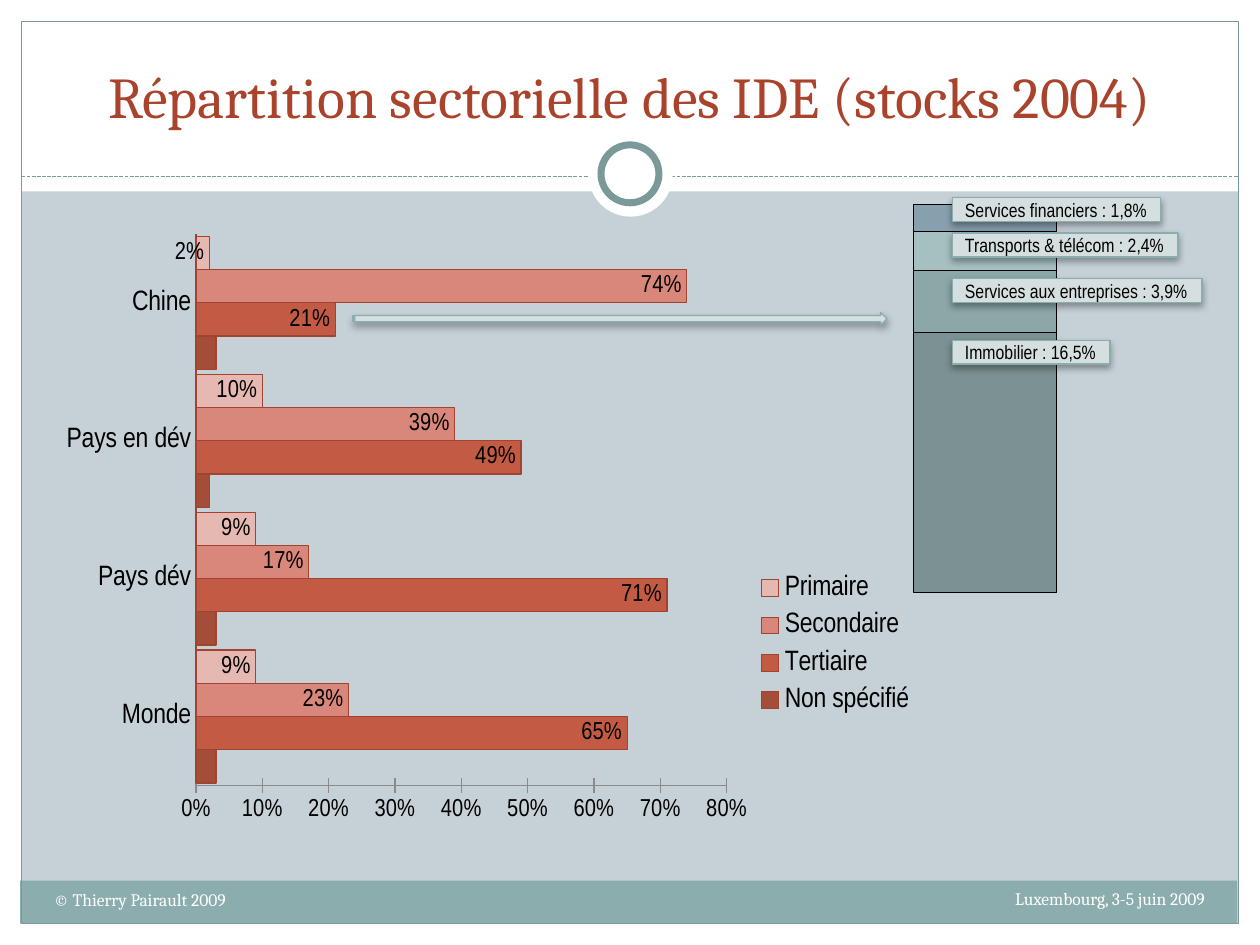
from lxml import etree
from pptx import Presentation
from pptx.chart.data import CategoryChartData
from pptx.dml.color import RGBColor
from pptx.enum.chart import XL_CHART_TYPE as ChartType, XL_LABEL_POSITION as LabelPosition
from pptx.enum.chart import XL_LEGEND_POSITION as LegendPosition, XL_TICK_MARK as TickMark
from pptx.enum.dml import MSO_LINE
from pptx.enum.shapes import MSO_CONNECTOR, MSO_SHAPE as Shape
from pptx.enum.text import MSO_ANCHOR as Anchor, MSO_AUTO_SIZE as AutoSize, PP_ALIGN as Align
from pptx.oxml import parse_xml
from pptx.oxml.ns import nsdecls, qn
from pptx.util import Inches, Pt

COLORS = {
    "background": "C5D1D7", "white": "FFFFFF", "black": "000000", "band": "8CADAE",
    "frame": "7C999A", "title": "A9432B", "label": "D5DFDF", "bar_line": "A0442F",
    "axis": "8B8B8B",
}
HEADING_FONT, CHART_FONT = "Cambria", "Arial Narrow"

TITLE = "Répartition sectorielle des IDE (stocks 2004)"
FOOTERS = [
    ("Luxembourg, 3-5 juin 2009", (6.33, 7, 3.33, 0.4), Align.RIGHT),
    ("© Thierry Pairault 2009", (0.33, 7.01, 3.92, 0.4), Align.LEFT),
]
MARGINS = [(0, 7.33, 10, 0.17), (0, 0, 10, 1.52), (0, 0, 0.17, 7.5), (9.83, 0, 0.17, 7.5)]
REGIONS = ["Monde", "Pays dév", "Pays en dév", "Chine"]
SECTORS = [
    ("Non spécifié", (0.03, 0.03, 0.02, 0.03), "A44D38"),
    ("Tertiaire", (0.65, 0.71, 0.49, 0.21), "C35B44"),
    ("Secondaire", (0.23, 0.17, 0.39, 0.74), "D8877A"),
    ("Primaire", (0.09, 0.09, 0.1, 0.02), "E6B8B2"),
]
SERVICES = [
    ("Series 1", (67,), "7B9192"),
    ("Series 2", (16,), "8BA7A8"),
    ("Series 3", (10,), "A6BFC0"),
    ("Series 4", (7,), "889FAE"),
]
SERVICE_LABELS = [
    ("Immobilier : 16,5%", 2.7, 1.25),
    ("Services aux entreprises : 3,9%", 2.21, 1.98),
    ("Transports & télécom : 2,4%", 1.85, 1.79),
    ("Services financiers : 1,8%", 1.57, 1.65),
]


def rgb(color):
    return RGBColor.from_string(COLORS.get(color, color))


def place(box):
    return [Inches(value) for value in box]


def format_font(font, size, color="black", name=CHART_FONT):
    font.size, font.name, font.bold = Pt(size), name, False
    font.color.rgb = rgb(color)


def write(shape, text, size=11, color="black", font=CHART_FONT, align=Align.LEFT, anchor=Anchor.TOP):
    frame = shape.text_frame
    frame.text, frame.word_wrap, frame.vertical_anchor = text, True, anchor
    paragraph = frame.paragraphs[0]
    paragraph.alignment = align
    format_font(paragraph.runs[0].font, size, color, font)
    return frame


def add_shape(slide, kind, box, fill=None, line=None, width=0.75):
    shape = slide.shapes.add_shape(kind, *place(box))
    shape.shadow.inherit = False
    if fill:
        shape.fill.solid()
        shape.fill.fore_color.rgb = rgb(fill)
    else:
        shape.fill.background()
    if line:
        shape.line.color.rgb = rgb(line)
        shape.line.width = Pt(width)
    else:
        shape.line.fill.background()
    return shape


def add_raised_shape(slide, kind, box):
    shape = add_shape(slide, kind, box, "label", "band")
    effects = shape.element.spPr.find(qn("a:effectLst"))
    effects.append(parse_xml(
        f'<a:outerShdw {nsdecls("a")} blurRad="{Pt(4)}" dist="{Pt(2)}" dir="5400000" rotWithShape="0">'
        f'<a:srgbClr val="{COLORS["black"]}"><a:alpha val="35000"/></a:srgbClr></a:outerShdw>'))
    return shape


def set_layout(parent, index, box, inner=False):
    for previous in parent.findall(qn("c:layout")):
        parent.remove(previous)
    layout = etree.Element(qn("c:layout"))
    manual = etree.SubElement(layout, qn("c:manualLayout"))
    settings = [("layoutTarget", "inner")] if inner else []
    settings += [("xMode", "edge"), ("yMode", "edge"), *zip("xywh", box)]
    for tag, value in settings:
        etree.SubElement(manual, qn(f"c:{tag}")).set("val", str(value))
    parent.insert(index, layout)


def add_chart(slide, kind, box, categories, rows, plot_box, gap, line, width):
    data = CategoryChartData(number_format="0%" if kind == ChartType.BAR_CLUSTERED else "General")
    data.categories = categories
    for name, values, _ in rows:
        data.add_series(name, values)
    chart = slide.shapes.add_chart(kind, *place(box), data).chart
    chart.has_title = chart.has_legend = False
    format_font(chart.font, 18, name=HEADING_FONT)
    chart.value_axis.has_major_gridlines = False
    plot = chart.plots[0]
    plot.gap_width, plot.vary_by_categories = gap, False
    set_layout(chart.element.find(".//" + qn("c:plotArea")), 0, plot_box, inner=True)
    for series, (_, _, color) in zip(plot.series, rows):
        series.format.fill.solid()
        series.format.fill.fore_color.rgb = rgb(color)
        series.format.line.color.rgb = rgb(line)
        series.format.line.width = Pt(width)
    return chart


def add_sector_chart(slide):
    chart = add_chart(slide, ChartType.BAR_CLUSTERED, (0.26, 1.76, 7.2, 5.12), REGIONS, SECTORS,
                      (0.18, 0.019, 0.585, 0.855), 15, "bar_line", 0.75)
    for axis, size, tick, color in [
        (chart.category_axis, 16, TickMark.NONE, "bar_line"),
        (chart.value_axis, 14, TickMark.CROSS, "axis"),
    ]:
        format_font(axis.tick_labels.font, size)
        axis.major_tick_mark, axis.minor_tick_mark = tick, TickMark.NONE
        axis.format.line.color.rgb = rgb(color)
    value_axis = chart.value_axis
    value_axis.minimum_scale, value_axis.maximum_scale, value_axis.major_unit = 0, 0.8, 0.1
    value_axis.tick_labels.number_format = "0%"
    value_axis.tick_labels.number_format_is_linked = False
    for series in list(chart.plots[0].series)[1:]:
        labels = series.data_labels
        labels.show_value, labels.position = True, LabelPosition.INSIDE_END
        labels.number_format, labels.number_format_is_linked = "0%", False
        format_font(labels.font, 14)
    chart.has_legend = True
    legend = chart.legend
    legend.position, legend.include_in_layout = LegendPosition.RIGHT, False
    format_font(legend.font, 16)
    set_layout(legend._element, 1, (0.78, 0.53, 0.21, 0.25))


def add_services_chart(slide):
    chart = add_chart(slide, ChartType.COLUMN_STACKED_100, (5.69, 1.51, 3.99, 3.31), ["1"], SERVICES,
                      (0.104, 0.034, 0.858, 0.931), 200, "black", 0.5)
    chart.plots[0].overlap = 100
    chart.category_axis.visible = chart.value_axis.visible = False


def add_frame(slide):
    for box in MARGINS:
        add_shape(slide, Shape.RECTANGLE, box, "white")
    add_shape(slide, Shape.RECTANGLE, (0.16, 6.99, 9.66, 0.34), "band")
    add_shape(slide, Shape.RECTANGLE, (0.17, 0.17, 9.66, 7.16), line="frame")
    rule = slide.shapes.add_connector(MSO_CONNECTOR.STRAIGHT, *place((0.17, 1.4, 9.83, 1.4)))
    rule.line.color.rgb, rule.line.width = rgb("frame"), Pt(0.75)
    rule.line.dash_style = MSO_LINE.SQUARE_DOT
    etree.SubElement(rule.element.spPr, qn("a:effectLst"))
    add_shape(slide, Shape.OVAL, (4.67, 1.05, 0.67, 0.67), "white")
    add_shape(slide, Shape.OVAL, (4.77, 1.15, 0.46, 0.46), "white", "frame", 4)


def main():
    presentation = Presentation()
    presentation.slide_width, presentation.slide_height = Inches(10), Inches(7.5)
    slide = presentation.slides.add_slide(presentation.slide_layouts[5])
    slide.background.fill.solid()
    slide.background.fill.fore_color.rgb = rgb("background")
    add_frame(slide)

    title = slide.shapes.title
    title.left, title.top, title.width, title.height = place((0.33, 0.25, 9.33, 0.83))
    write(title, TITLE, size=33, color="title", font=HEADING_FONT, align=Align.CENTER, anchor=Anchor.BOTTOM)
    title.element.getparent().append(title.element)
    for text, box, align in FOOTERS:
        write(slide.shapes.add_textbox(*place(box)), text, size=10, color="white", font=HEADING_FONT, align=align)

    add_sector_chart(slide)
    add_services_chart(slide)
    for text, top, width in SERVICE_LABELS:
        label = add_raised_shape(slide, Shape.RECTANGLE, (7.56, top, width, 0.19))
        frame = write(label, text, anchor=Anchor.MIDDLE)
        frame.margin_top = frame.margin_bottom = 0
        frame.word_wrap, frame.auto_size = False, AutoSize.SHAPE_TO_FIT_TEXT
    add_raised_shape(slide, Shape.STRIPED_RIGHT_ARROW, (2.8, 2.48, 4.24, 0.1))
    presentation.save("out.pptx")


if __name__ == "__main__":
    main()
